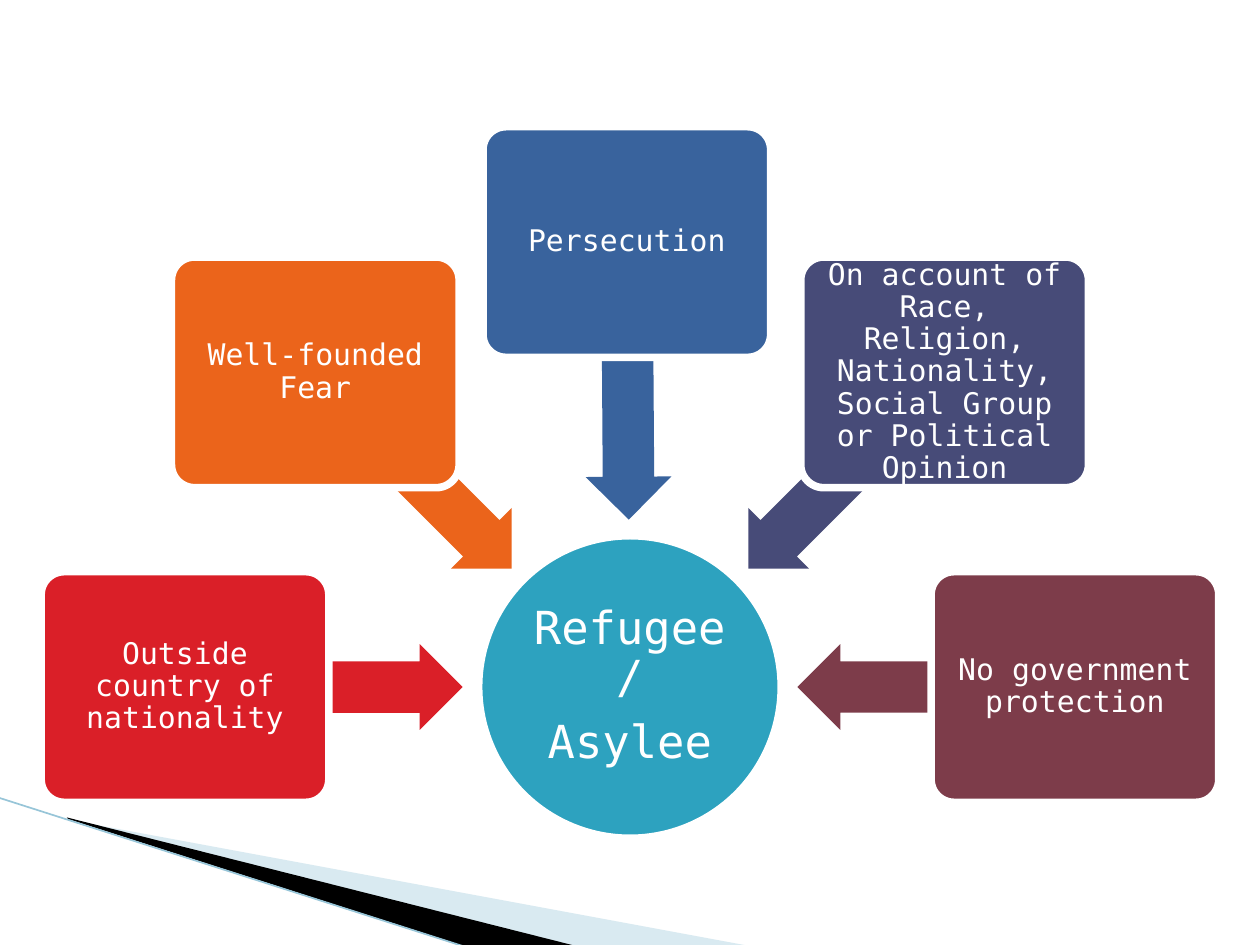
from dataclasses import dataclass
from math import cos, radians, sin

from lxml.etree import SubElement
from pptx import Presentation
from pptx.dml.color import RGBColor
from pptx.enum.shapes import MSO_CONNECTOR as Connector, MSO_SHAPE as Preset
from pptx.enum.text import MSO_ANCHOR as Anchor, PP_ALIGN as Align
from pptx.oxml.ns import qn
from pptx.util import Cm, Pt


@dataclass(frozen=True)
class Theme:
    font: str = "DejaVu Sans Mono"
    hub_size: int = 26
    factor_size: int = 17
    white: str = "FFFFFF"
    black: str = "000000"
    hub: str = "2DA2BF"
    red: str = "DA1F28"
    orange: str = "EB641B"
    blue: str = "39639D"
    indigo: str = "474B78"
    maroon: str = "7D3C4A"
    pale: str = "A0CBDC"
    edge: str = "97C5D8"
    outline: float = 4.33


def write_text(frame, text, *, font, size, color, inset):
    frame.word_wrap = True
    frame.vertical_anchor = Anchor.MIDDLE
    frame.margin_left = frame.margin_right = Cm(inset)
    frame.margin_top = frame.margin_bottom = Cm(inset)
    frame.text = text
    for paragraph in frame.paragraphs:
        paragraph.alignment = Align.CENTER
        paragraph.line_spacing = 0.9
        paragraph.space_after = Pt(round(size * 0.35))
        paragraph.font.name = font
        paragraph.font.size = Pt(size)
        paragraph.font.color.rgb = RGBColor.from_string(color)


class Diagram:
    """Draws themed elements on one slide, measured in centimetres."""

    def __init__(self, slide, theme):
        self.shapes = slide.shapes
        self.theme = theme

    def paint(self, shape, color, outlined=False):
        shape.shadow.inherit = False
        shape.fill.solid()
        shape.fill.fore_color.rgb = RGBColor.from_string(color)
        if outlined:
            shape.line.color.rgb = RGBColor.from_string(self.theme.white)
            shape.line.width = Pt(self.theme.outline)
        else:
            shape.line.fill.background()

    def centred(self, preset, center, size, color, outlined=False):
        (x, y), (width, height) = center, size
        shape = self.shapes.add_shape(
            preset, Cm(x - width / 2), Cm(y - height / 2), Cm(width), Cm(height))
        self.paint(shape, color, outlined)
        return shape

    def label(self, shape, text, size, inset):
        write_text(shape.text_frame, text, font=self.theme.font, size=size,
                   color=self.theme.white, inset=inset)

    def hub(self, center, diameter, text):
        shape = self.centred(Preset.OVAL, center, (diameter, diameter),
                             self.theme.hub, True)
        self.label(shape, text, self.theme.hub_size, 0.05)

    def arrow(self, center, angle, color):
        shape = self.centred(Preset.LEFT_ARROW, center, (5.59, 1.73), color)
        shape.adjustments[0], shape.adjustments[1] = 0.6, 0.5
        shape.rotation = angle

    def box(self, center, color, text):
        shape = self.centred(Preset.ROUNDED_RECTANGLE, center, (5.8, 4.65), color, True)
        shape.adjustments[0] = 0.1
        self.label(shape, text, self.theme.factor_size, 0.1)

    def wedge(self, points, color, alpha=None):
        start, *rest = [(Cm(x), Cm(y)) for x, y in points]
        builder = self.shapes.build_freeform(*start)
        builder.add_line_segments(rest, close=True)
        shape = builder.convert_to_shape()
        self.paint(shape, color)
        if alpha:
            fill = shape.fill.fore_color._xFill
            SubElement(fill[0], qn("a:alpha"), val=str(alpha * 1000))

    def line(self, start, end, color, width):
        line = self.shapes.add_connector(
            Connector.STRAIGHT, *[Cm(value) for value in (*start, *end)])
        line.line.color.rgb = RGBColor.from_string(color)
        line.line.width = Pt(width)
        SubElement(line._element.spPr, qn("a:effectLst"))


def main():
    presentation = Presentation()
    presentation.slide_width, presentation.slide_height = Cm(25.4), Cm(19.05)
    slide = presentation.slides.add_slide(presentation.slide_layouts[6])
    theme = Theme()
    diagram = Diagram(slide, theme)

    diagram.wedge([(1.4, 16.53), (15.11, 19.07), (11.58, 19.07), (1.4, 16.51)],
                  theme.pale, alpha=40)
    diagram.wedge([(1.35, 16.48), (11.61, 19.07), (9.45, 19.1), (1.37, 16.51)],
                  theme.black)
    diagram.line((-0.03, 16.08), (9.42, 19.1), theme.edge, 0.95)

    center = (12.7, 13.85)
    arrow_orbit, box_orbit = 6.17, 8.97
    factors = [
        (180, theme.red, "Outside country of nationality"),
        (225, theme.orange, "Well-founded Fear"),
        (269.6, theme.blue, "Persecution"),
        (315, theme.indigo, "On account of Race, Religion, Nationality, "
                            "Social Group or Political Opinion"),
        (0, theme.maroon, "No government protection"),
    ]

    def orbit(radius, angle):
        turn = radians(angle)
        return center[0] + radius * cos(turn), center[1] + radius * sin(turn)

    diagram.hub(center, 6.1, "Refugee/\nAsylee")
    for angle, color, text in factors:
        diagram.arrow(orbit(arrow_orbit, angle), angle, color)
        diagram.box(orbit(box_orbit, angle), color, text)

    presentation.save("out.pptx")


if __name__ == "__main__":
    main()
